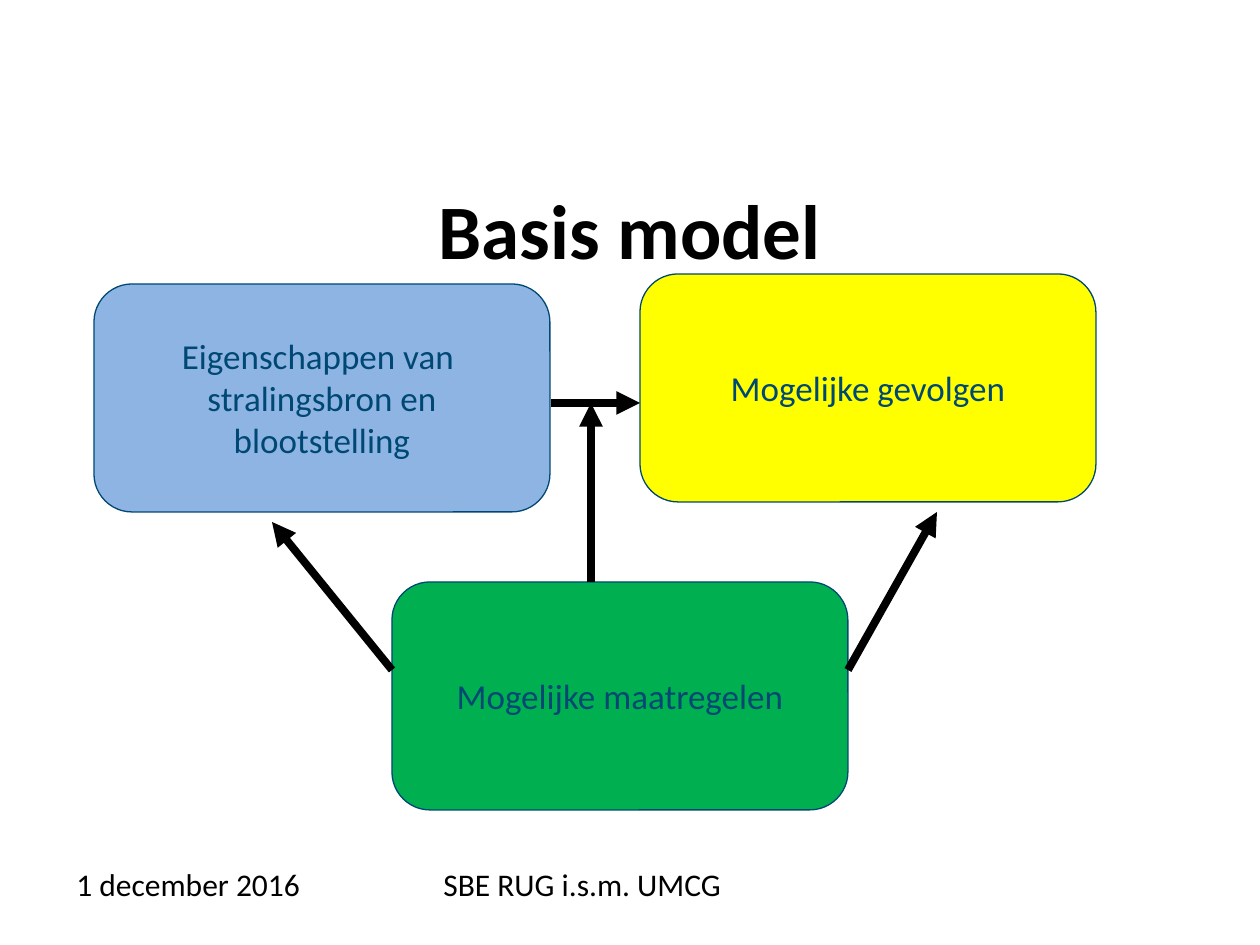
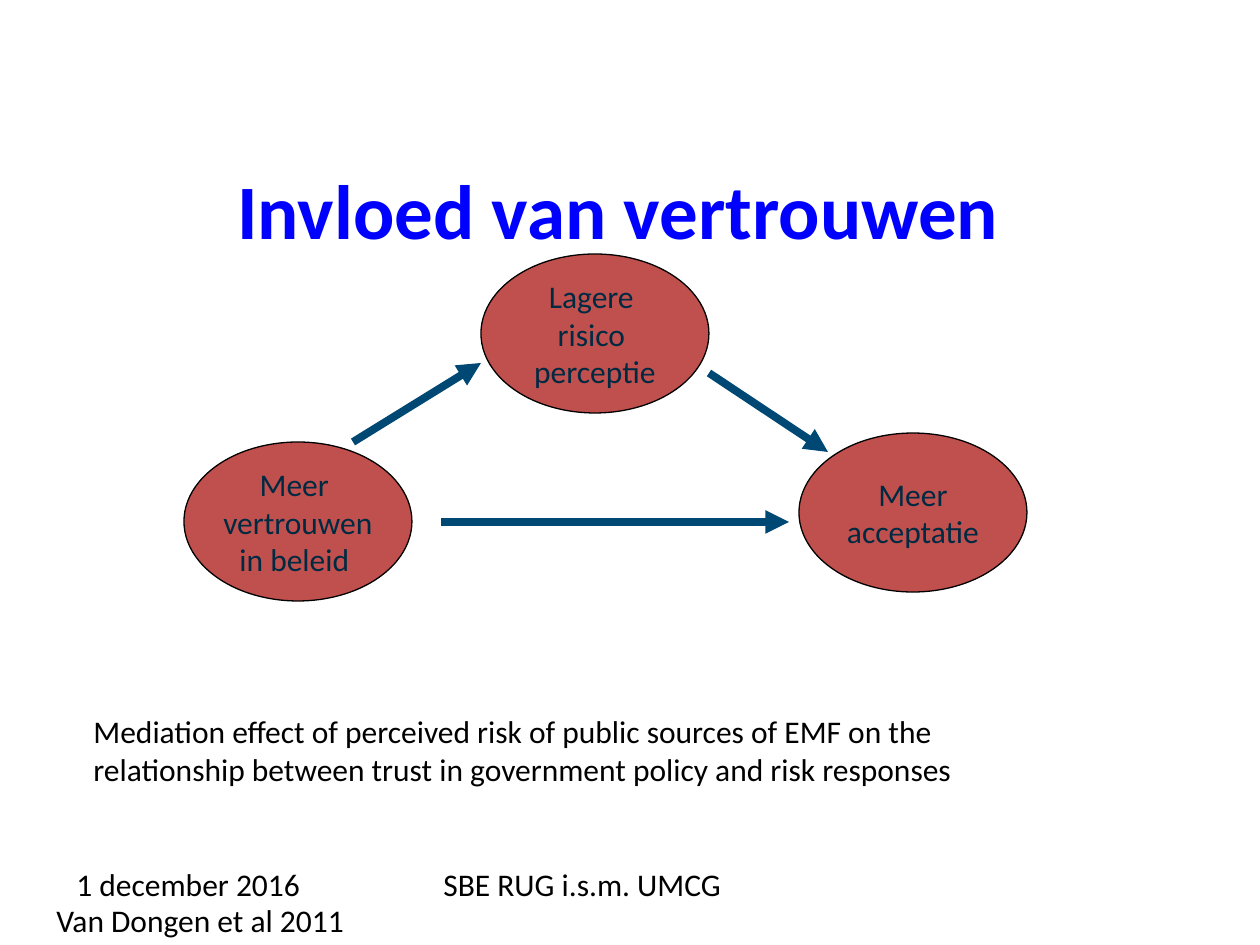
from dataclasses import dataclass

from lxml import etree
from pptx import Presentation
from pptx.dml.color import RGBColor
from pptx.enum.shapes import MSO_CONNECTOR, MSO_SHAPE
from pptx.enum.text import MSO_ANCHOR, PP_ALIGN
from pptx.oxml.ns import qn
from pptx.slide import Slide
from pptx.text.text import TextFrame
from pptx.util import Emu, Pt

ROUNDED = MSO_SHAPE.ROUNDED_RECTANGLE
ELLIPSE = MSO_SHAPE.OVAL
STRAIGHT = MSO_CONNECTOR.STRAIGHT
MIDDLE = MSO_ANCHOR.MIDDLE
TOP = MSO_ANCHOR.TOP
CENTER = PP_ALIGN.CENTER
LEFT = PP_ALIGN.LEFT

BLACK = RGBColor(0x00, 0x00, 0x00)
TITLE_BLUE = RGBColor(0x00, 0x00, 0xFF)
PETROL = RGBColor(0x00, 0x48, 0x74)
NAVY = RGBColor(0x00, 0x29, 0x42)
SKY = RGBColor(0x8E, 0xB4, 0xE3)
GREEN = RGBColor(0x00, 0xB0, 0x50)
YELLOW = RGBColor(0xFF, 0xFF, 0x00)
BRICK = RGBColor(0xC0, 0x50, 0x4D)

FONT = "Calibri"
PX_PER_INCH = 126
EMU_PER_INCH = 914400
BLANK_LAYOUT = 6


@dataclass(frozen=True)
class TextStyle:
    size: int
    color: RGBColor
    bold: bool = False
    align: PP_ALIGN = LEFT


@dataclass(frozen=True)
class NodeStyle:
    shape: MSO_SHAPE
    width: int
    height: int
    outline: RGBColor
    text: TextStyle


@dataclass(frozen=True)
class Node:
    left: int
    top: int
    fill: RGBColor
    lines: tuple[str, ...]


@dataclass(frozen=True)
class Arrow:
    x1: int
    y1: int
    x2: int
    y2: int


@dataclass(frozen=True)
class Label:
    left: int
    top: int
    width: int
    height: int
    lines: tuple[str, ...]


BODY = TextStyle(18, BLACK)
MODEL_BOX = NodeStyle(ROUNDED, 456, 228, PETROL, TextStyle(20, PETROL, align=CENTER))
TRUST_OVAL = NodeStyle(ELLIPSE, 228, 159, BLACK, TextStyle(18, NAVY, align=CENTER))

FOOTERS = (
    Label(64, 859, 294, 50, ("1 december 2016",)),
    Label(431, 859, 399, 50, ("SBE RUG i.s.m. UMCG",)),
)

MODEL_TITLE = Label(67, 176, 1126, 62, ("Basis model",))
MODEL_NODES = (
    Node(94, 284, SKY, ("Eigenschappen van ", "stralingsbron en", "blootstelling")),
    Node(392, 582, GREEN, ("Mogelijke maatregelen",)),
    Node(640, 274, YELLOW, ("Mogelijke gevolgen",)),
)
MODEL_ARROWS = (
    Arrow(551, 403, 640, 403),
    Arrow(392, 670, 272, 522),
    Arrow(848, 670, 937, 512),
    Arrow(591, 582, 591, 403),
)

TRUST_TITLE = Label(64, 156, 1126, 62, ("Invloed van vertrouwen ",))
TRUST_NODES = (
    Node(184, 442, BRICK, ("Meer ", "vertrouwen", "in beleid ")),
    Node(481, 254, BRICK, ("Lagere ", "risico ", "perceptie")),
    Node(799, 433, BRICK, ("Meer", "acceptatie")),
)
TRUST_ARROWS = (
    Arrow(353, 442, 481, 363),
    Arrow(441, 522, 789, 522),
    Arrow(709, 373, 828, 452),
)
TRUST_NOTES = (
    Label(44, 895, 391, 50, ("Van Dongen et al 2011",)),
    Label(81, 706, 1104, 89, (
        "Mediation effect of perceived risk of public sources of EMF on the",
        "relationship between trust in government policy and risk responses",
    )),
)


def px(length: int) -> Emu:
    return Emu(round(length * EMU_PER_INCH / PX_PER_INCH))


def write_lines(frame: TextFrame, lines: tuple[str, ...], style: TextStyle) -> None:
    """Put each line in its own paragraph."""
    for index, line in enumerate(lines):
        paragraph = frame.add_paragraph() if index else frame.paragraphs[0]
        paragraph.alignment = style.align
        run = paragraph.add_run()
        run.text = line
        run.font.name = FONT
        run.font.size = Pt(style.size)
        run.font.bold = style.bold
        run.font.color.rgb = style.color


def add_label(slide: Slide, label: Label, style: TextStyle = BODY) -> None:
    box = slide.shapes.add_textbox(
        px(label.left), px(label.top), px(label.width), px(label.height))
    frame = box.text_frame
    frame.word_wrap = True
    frame.vertical_anchor = TOP
    write_lines(frame, label.lines, style)


def add_node(slide: Slide, node: Node, style: NodeStyle) -> None:
    shape = slide.shapes.add_shape(
        style.shape, px(node.left), px(node.top), px(style.width), px(style.height))
    shape.shadow.inherit = False
    shape.fill.solid()
    shape.fill.fore_color.rgb = node.fill
    shape.line.color.rgb = style.outline
    shape.line.width = Pt(0.75)
    frame = shape.text_frame
    frame.word_wrap = False
    frame.vertical_anchor = MIDDLE
    write_lines(frame, node.lines, style.text)


def add_arrow(slide: Slide, arrow: Arrow, color: RGBColor) -> None:
    connector = slide.shapes.add_connector(
        STRAIGHT, px(arrow.x1), px(arrow.y1), px(arrow.x2), px(arrow.y2))
    connector.line.color.rgb = color
    connector.line.width = Pt(4.5)
    etree.SubElement(connector.line._get_or_add_ln(), qn("a:tailEnd"), type="triangle")
    etree.SubElement(connector._element.spPr, qn("a:effectLst"))


def add_diagram_slide(
    deck: Presentation,
    title: Label,
    title_color: RGBColor,
    nodes: tuple[Node, ...],
    node_style: NodeStyle,
    arrows: tuple[Arrow, ...],
    arrow_color: RGBColor,
    notes: tuple[Label, ...] = (),
) -> None:
    slide = deck.slides.add_slide(deck.slide_layouts[BLANK_LAYOUT])
    add_label(slide, title, TextStyle(44, title_color, bold=True, align=CENTER))
    for node in nodes:
        add_node(slide, node, node_style)
    for arrow in arrows:
        add_arrow(slide, arrow, arrow_color)
    for label in notes + FOOTERS:
        add_label(slide, label)


def main() -> None:
    deck = Presentation()
    deck.slide_width = px(1260)
    deck.slide_height = px(945)
    add_diagram_slide(deck, MODEL_TITLE, BLACK, MODEL_NODES, MODEL_BOX,
                      MODEL_ARROWS, BLACK)
    add_diagram_slide(deck, TRUST_TITLE, TITLE_BLUE, TRUST_NODES, TRUST_OVAL,
                      TRUST_ARROWS, PETROL, TRUST_NOTES)
    deck.save("out.pptx")


if __name__ == "__main__":
    main()
